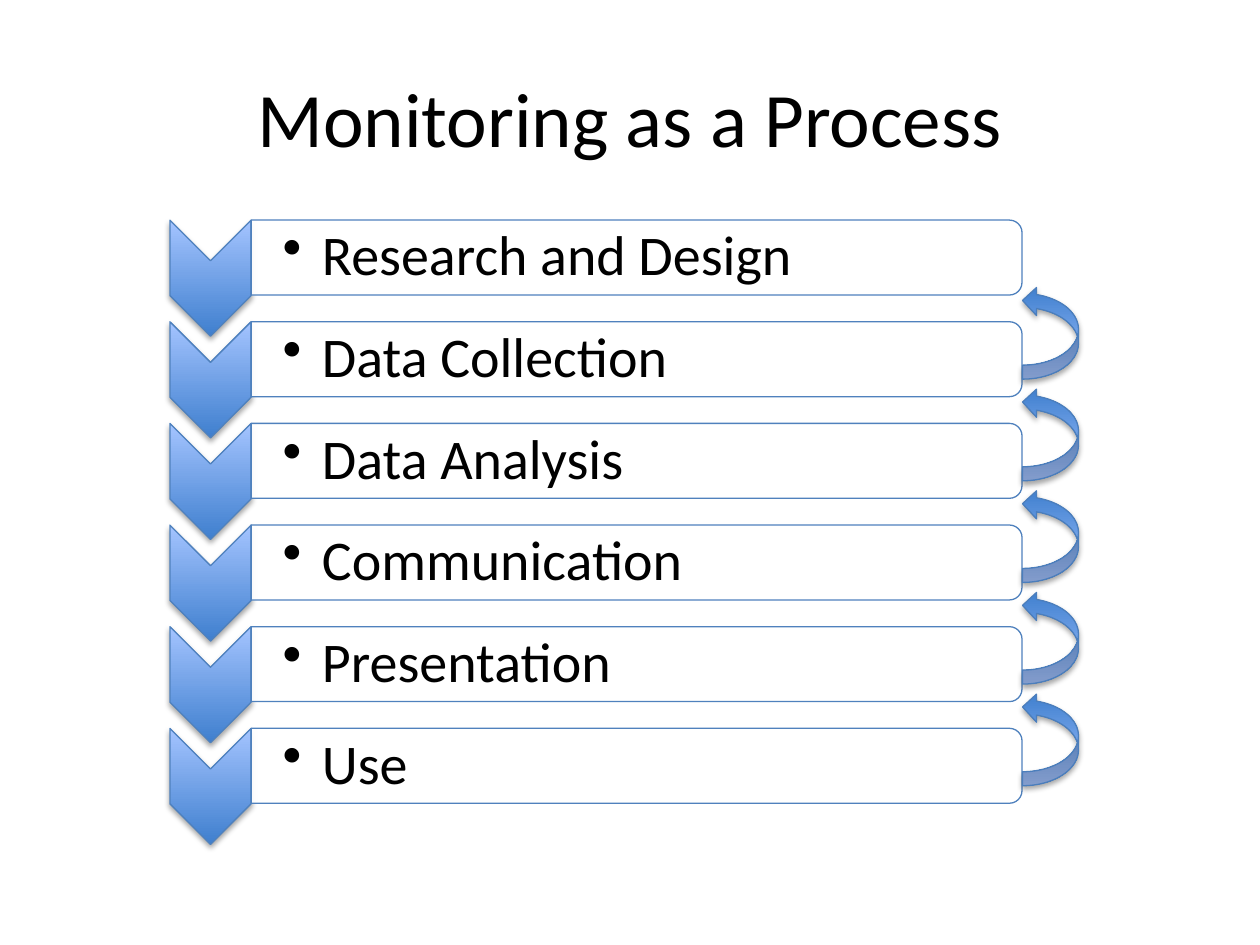
"""Build the slide "Monitoring as a Process": six steps with feedback arrows."""
from dataclasses import dataclass

from lxml import etree
from pptx import Presentation
from pptx.dml.color import RGBColor
from pptx.enum import shapes, text
from pptx.oxml import parse_xml
from pptx.oxml.ns import nsdecls, qn
from pptx.util import Pt

TITLE = "Monitoring as a Process"
STEPS = [
    "Research and Design",
    "Data Collection",
    "Data Analysis",
    "Communication",
    "Presentation",
    "Use",
]


@dataclass(frozen=True)
class Theme:
    """Fonts, sizes and colours of the slide."""

    font: str = "Calibri"
    title_size: float = 44
    step_size: float = 32
    ink: str = "000000"
    panel: str = "FFFFFF"
    line: str = "4F81BD"
    arrow_line: str = "4B7EBC"
    dark: str = "3F7FCE"
    light: str = "A4C4FF"
    line_width: float = 0.75


THEME = Theme()
PITCH = 58.08
CHEVRON = (97.1, 125.8, 46.4, 66.3)
PANEL = (143.5, 125.8, 440.5, 42.8)
LABEL = (143.5, 127.9, 438.4, 38.7)
ARROW = (584.3, 163.7, 32, 53)


def colour(value):
    return RGBColor.from_string(value)


def add_shape(page, kind, frame, line, turned=False):
    """Add an outlined shape whose visible frame is given."""
    left, top, width, height = frame
    if turned:
        left, top = left + (width - height) / 2, top + (height - width) / 2
        width, height = height, width
    shape = page.shapes.add_shape(kind, Pt(left), Pt(top), Pt(width), Pt(height))
    shape.rotation = 90 if turned else 0
    shape.shadow.inherit = False
    shape.line.color.rgb = colour(line)
    shape.line.width = Pt(THEME.line_width)
    return shape


def add_gloss(shape):
    """Give a shape its upright gradient and soft shadow."""
    shape.fill.gradient()
    shape.fill.gradient_angle = 90
    for stop, value in zip(shape.fill.gradient_stops, (THEME.dark, THEME.light)):
        stop.color.rgb = colour(value)
    properties = shape.element.spPr
    properties.find(qn("a:gradFill")).set("rotWithShape", "0")
    properties.find(qn("a:effectLst")).append(parse_xml(
        f'<a:outerShdw {nsdecls("a")} blurRad="{Pt(3.15)}" dist="{Pt(1.8)}" '
        'dir="5400000" rotWithShape="0"><a:srgbClr val="000000">'
        '<a:alpha val="35000"/></a:srgbClr></a:outerShdw>'))


def add_text(page, wording, frame, size, align, insets):
    """Add a one-line text box and return its paragraph."""
    box = page.shapes.add_textbox(*map(Pt, frame)).text_frame
    box.word_wrap = True
    box.vertical_anchor = text.MSO_ANCHOR.MIDDLE
    box.margin_left, box.margin_top, box.margin_right, box.margin_bottom = map(Pt, insets)
    para = box.paragraphs[0]
    para.alignment = align
    span = para.add_run()
    span.text = wording
    span.font.name = THEME.font
    span.font.size = Pt(size)
    span.font.color.rgb = colour(THEME.ink)
    return para


def add_bullet(para):
    para.line_spacing = 0.9
    para.space_after = Pt(4.8)
    properties = para._p.get_or_add_pPr()
    properties.set("marL", str(Pt(22.5)))
    properties.set("indent", str(Pt(-22.5)))
    etree.SubElement(properties, qn("a:buChar")).set("char", "•")


def add_step(page, wording, drop):
    chevron, panel, label = (
        (left, top + drop, width, height)
        for left, top, width, height in (CHEVRON, PANEL, LABEL))
    kinds = shapes.MSO_SHAPE
    add_gloss(add_shape(page, kinds.CHEVRON, chevron, THEME.line, turned=True))
    card = add_shape(page, kinds.ROUND_2_SAME_RECTANGLE, panel, THEME.line, turned=True)
    card.fill.solid()
    card.fill.fore_color.rgb = colour(THEME.panel)
    shade = card.element.spPr.find(qn("a:solidFill"))[0]
    etree.SubElement(shade, qn("a:alpha")).set("val", "90000")
    add_bullet(add_text(page, wording, label, THEME.step_size,
                        text.PP_ALIGN.LEFT, (18, 1.5, 1.5, 1.5)))


def add_feedback(page, drop):
    left, top, width, height = ARROW
    arrow = add_shape(page, shapes.MSO_SHAPE.CURVED_LEFT_ARROW,
                      (left, top + drop, width, height), THEME.arrow_line)
    arrow.element.spPr.find(qn("a:xfrm")).set("flipV", "1")
    add_gloss(arrow)


def main():
    deck = Presentation()
    deck.slide_width, deck.slide_height = Pt(720), Pt(540)
    page = deck.slides.add_slide(deck.slide_layouts[6])
    add_text(page, TITLE, (36, 21.6, 648, 90), THEME.title_size,
             text.PP_ALIGN.CENTER, (7.2, 3.6, 7.2, 3.6))
    for row, wording in enumerate(STEPS):
        add_step(page, wording, row * PITCH)
    for row in range(len(STEPS) - 1):
        add_feedback(page, row * PITCH)
    deck.save("out.pptx")


if __name__ == "__main__":
    main()
